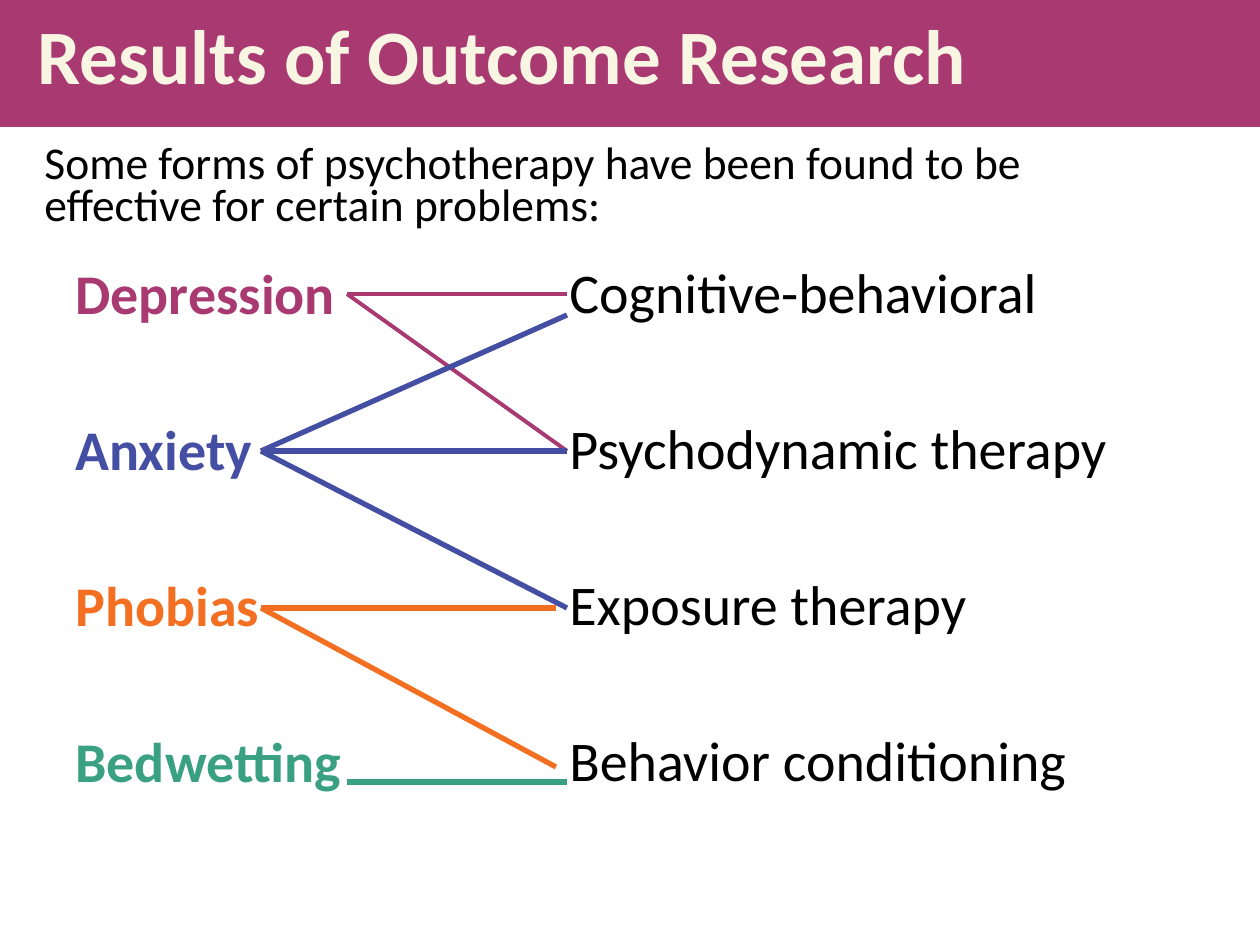
from dataclasses import dataclass

from lxml import etree
from pptx import Presentation
from pptx import util as u
from pptx.dml.color import RGBColor
from pptx.enum import shapes, text
from pptx.oxml import ns

EMU_PER_PX = 914400 / 126
FONT = "Calibri"

PLUM = RGBColor(0xA9, 0x39, 0x71)
BLUE = RGBColor(0x44, 0x4E, 0xA2)
ORANGE = RGBColor(0xF3, 0x6F, 0x21)
GREEN = RGBColor(0x3A, 0xA0, 0x82)
CREAM = RGBColor(0xF8, 0xF6, 0xE3)
BLACK = RGBColor(0, 0, 0)

# Four rows of problems and therapies, evenly spaced
ROW_TOP, ROW_PITCH = 294, 157
ROW_GAP = u.Pt(50.7)
ROWS = [ROW_TOP + ROW_PITCH * i for i in range(4)]
LONG_START, SHORT_START = 347, 261
THERAPY_EDGE, ORANGE_EDGE = 567, 556
BEDWETTING_Y = 782


@dataclass(frozen=True)
class Entry:
    wording: str
    color: RGBColor = BLACK
    bold: bool = False


@dataclass(frozen=True)
class Link:
    start: tuple[int, int]
    end: tuple[int, int]
    color: RGBColor
    weight: float = 3


PROBLEMS = [
    Entry("Depression", PLUM, True),
    Entry("Anxiety", BLUE, True),
    Entry("Phobias", ORANGE, True),
    Entry("Bedwetting", GREEN, True),
]
THERAPIES = [
    Entry("Cognitive-behavioral"),
    Entry("Psychodynamic therapy"),
    Entry("Exposure therapy"),
    Entry("Behavior conditioning"),
]

DEPRESSION = (LONG_START, ROWS[0])
ANXIETY = (SHORT_START, ROWS[1])
PHOBIAS = (SHORT_START, ROWS[2])
LINKS = [
    Link(DEPRESSION, (THERAPY_EDGE, ROWS[1]), PLUM, 2.25),
    Link(ANXIETY, (THERAPY_EDGE, ROWS[1]), BLUE),
    Link((LONG_START, BEDWETTING_Y), (THERAPY_EDGE, BEDWETTING_Y), GREEN),
    Link(ANXIETY, (THERAPY_EDGE, ROWS[2]), BLUE),
    Link(PHOBIAS, (ORANGE_EDGE, ROWS[2]), ORANGE),
    Link(DEPRESSION, (THERAPY_EDGE, ROWS[0]), PLUM, 2.25),
    Link(ANXIETY, (THERAPY_EDGE, 315), BLUE),
    Link(PHOBIAS, (ORANGE_EDGE, 767), ORANGE),
]


def px(length: int) -> u.Emu:
    return u.Emu(round(length * EMU_PER_PX))


def add_run(paragraph, entry: Entry, size: int) -> None:
    run = paragraph.add_run()
    run.text = entry.wording
    run.font.name = FONT
    run.font.size = u.Pt(size)
    run.font.bold = entry.bold
    run.font.color.rgb = entry.color


def add_text_frame(slide, left: int, top: int, width: int, height: int):
    frame = slide.shapes.add_textbox(px(left), px(top), px(width), px(height)).text_frame
    frame.word_wrap = True
    return frame


def add_column(slide, left: int, top: int, width: int, entries: list[Entry]) -> None:
    frame = add_text_frame(slide, left, top, width, 624)
    for row, entry in enumerate(entries):
        paragraph = frame.add_paragraph() if row else frame.paragraphs[0]
        paragraph.space_before = ROW_GAP if row else u.Pt(0)
        add_run(paragraph, entry, 32)


def add_link(slide, link: Link) -> None:
    line = slide.shapes.add_connector(
        shapes.MSO_CONNECTOR.STRAIGHT, *map(px, link.start + link.end))
    line.line.color.rgb = link.color
    line.line.width = u.Pt(link.weight)
    etree.SubElement(line._element.spPr, ns.qn("a:effectLst"))


def add_title(slide) -> None:
    banner = slide.shapes.add_shape(
        shapes.MSO_SHAPE.RECTANGLE, px(0), px(0), px(1260), px(127))
    banner.shadow.inherit = False
    banner.fill.solid()
    banner.fill.fore_color.rgb = PLUM
    banner.line.fill.background()
    frame = banner.text_frame
    frame.word_wrap = True
    frame.margin_left = u.Inches(0.3)
    frame.vertical_anchor = text.MSO_ANCHOR.MIDDLE
    heading = frame.paragraphs[0]
    heading.alignment = text.PP_ALIGN.LEFT
    heading.line_spacing = u.Pt(42)
    add_run(heading, Entry("Results of Outcome Research", CREAM, True), 44)


def add_intro(slide) -> None:
    intro = add_text_frame(slide, 32, 140, 1167, 120).paragraphs[0]
    intro.line_spacing = u.Pt(24)
    intro.space_after = u.Pt(6)
    add_run(intro, Entry("Some forms of psychotherapy have been found to be "
                         "effective for certain problems:"), 26)


def main() -> None:
    deck = Presentation()
    deck.slide_width, deck.slide_height = px(1260), px(945)
    slide = deck.slides.add_slide(deck.slide_layouts[6])

    # Banner and the two columns
    add_title(slide)
    add_column(slide, 63, 252, 357, PROBLEMS)
    add_column(slide, 557, 251, 661, THERAPIES)

    # Which therapy helps which problem
    for link in LINKS:
        add_link(slide, link)

    add_intro(slide)
    deck.save("out.pptx")


if __name__ == "__main__":
    main()
